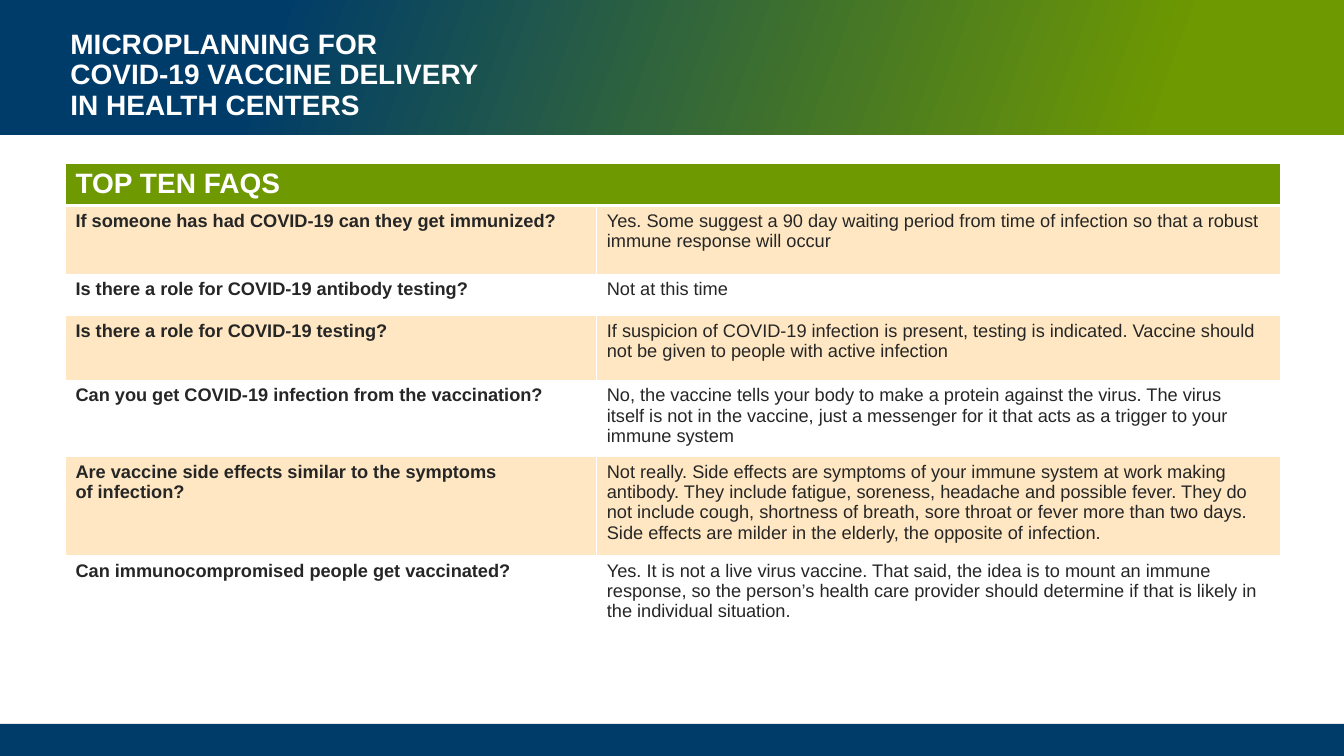
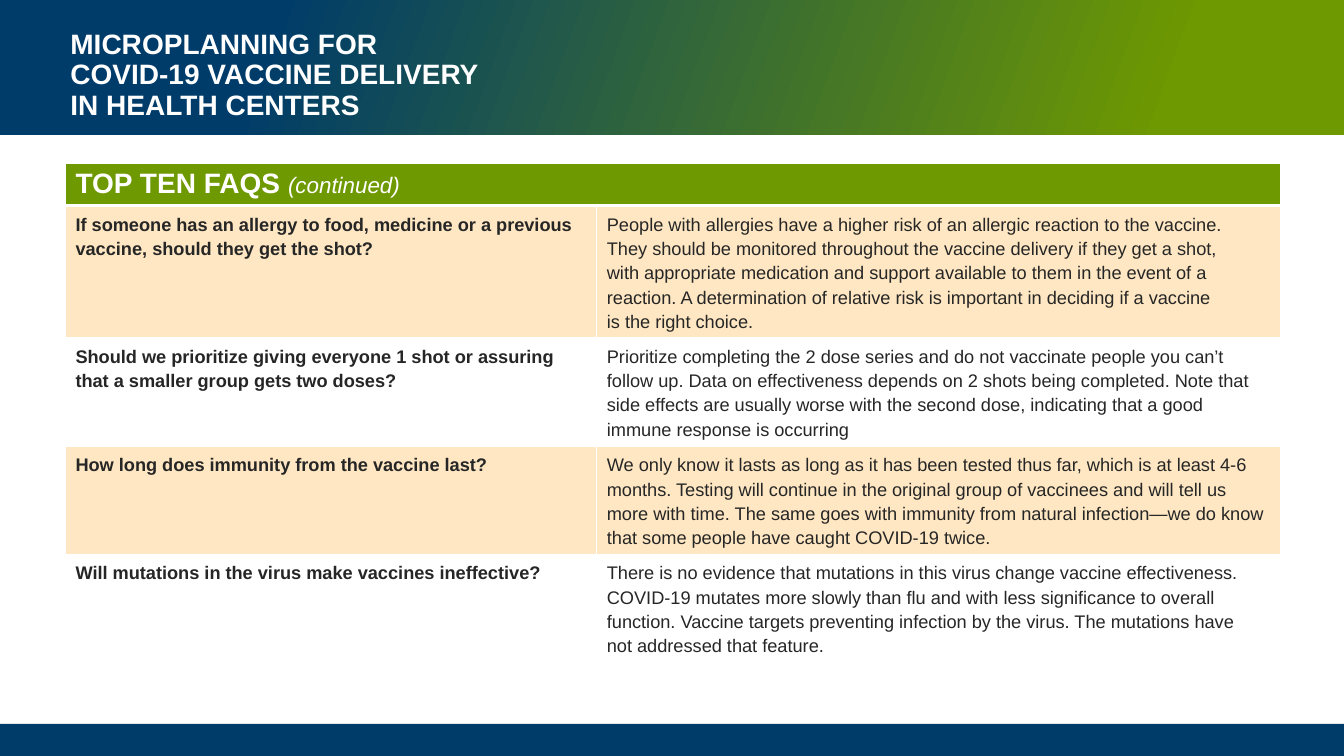
"""Build two slides of vaccine questions and answers."""
from lxml import etree
from pptx import Presentation
from pptx.dml.color import RGBColor
from pptx.enum.shapes import MSO_SHAPE
from pptx.enum.text import MSO_ANCHOR, MSO_AUTO_SIZE, PP_ALIGN
from pptx.oxml.ns import qn
from pptx.util import Cm, Pt

RECT = MSO_SHAPE.RECTANGLE
TOP = MSO_ANCHOR.TOP
FIXED = MSO_AUTO_SIZE.NONE
LEFT = PP_ALIGN.LEFT

HEX = {"navy": "003C6A", "green": "6E9900", "amber": "FCAF30",
       "white": "FFFFFF", "ink": "262626"}
WIDE, HIGH = 33.87, 19.05
TITLE = "MICROPLANNING FOR\nCOVID-19 VACCINE DELIVERY\nIN HEALTH CENTERS"

FIRST = [
    (1.73, "If someone has had COVID-19 can they get immunized?",
     "Yes. Some suggest a 90 day waiting period from time of infection so that "
     "a robust immune response will occur"),
    (1.04, "Is there a role for COVID-19 antibody testing?", "Not at this time"),
    (1.63, "Is there a role for COVID-19 testing?",
     "If suspicion of COVID-19 infection is present, testing is indicated. "
     "Vaccine should not be given to people with active infection"),
    (1.93, "Can you get COVID-19 infection from the vaccination?",
     "No, the vaccine tells your body to make a protein against the virus. The virus\n"
     "itself is not in the vaccine, just a messenger for it that acts as a trigger "
     "to your immune system"),
    (2.49, "Are vaccine side effects similar to the symptoms\nof infection?",
     "Not really. Side effects are symptoms of your immune system at work making "
     "antibody. They include fatigue, soreness, headache and possible fever. They do "
     "not include cough, shortness of breath, sore throat or fever more than two days. "
     "Side effects are milder in the elderly, the opposite of infection."),
    (1.93, "Can immunocompromised people get vaccinated?",
     "Yes. It is not a live virus vaccine. That said, the idea is to mount an immune "
     "response, so the person’s health care provider should determine if that is "
     "likely in the individual situation."),
]
SECOND = [
    (3.28, "If someone has an allergy to food, medicine or a previous vaccine, "
     "should they get the shot?",
     "People with allergies have a higher risk of an allergic reaction to the vaccine.\n"
     "They should be monitored throughout the vaccine delivery if they get a shot,\n"
     "with appropriate medication and support available to them in the event of a "
     "reaction. A determination of relative risk is important in deciding if a vaccine\n"
     "is the right choice."),
    (2.74, "Should we prioritize giving everyone 1 shot or assuring that a smaller "
     "group gets two doses?",
     "Prioritize completing the 2 dose series and do not vaccinate people you can’t "
     "follow up. Data on effectiveness depends on 2 shots being completed. Note that "
     "side effects are usually worse with the second dose, indicating that a good "
     "immune response is occurring"),
    (2.72, "How long does immunity from the vaccine last?",
     "We only know it lasts as long as it has been tested thus far, which is at least "
     "4-6 months. Testing will continue in the original group of vaccinees and will "
     "tell us more with time. The same goes with immunity from natural infection—we do "
     "know that some people have caught COVID-19 twice."),
    (2.72, "Will mutations in the virus make vaccines ineffective?",
     "There is no evidence that mutations in this virus change vaccine effectiveness. "
     "COVID-19 mutates more slowly than flu and with less significance to overall "
     "function. Vaccine targets preventing infection by the virus. The mutations have\n"
     "not addressed that feature."),
]


def rgb(name):
    return RGBColor.from_string(HEX[name])


def write(frame, text, size=13, color="ink", bold=False, italic=False, gap=1.0):
    para = frame.paragraphs[0]
    para.alignment = LEFT
    para.line_spacing = gap
    for index, line in enumerate(text.split("\n")):
        if index:
            para.add_line_break()
        run = para.add_run()
        run.text = line
        font = run.font
        font.name, font.size = "Arial", Pt(size)
        font.bold, font.italic = bold, italic
        font.color.rgb = rgb(color)


class Deck:
    def __init__(self):
        self.show = Presentation()
        self.show.slide_width, self.show.slide_height = Cm(WIDE), Cm(HIGH)
        self.base = self.show.slide_layouts[5]
        self.slide = None
        for item in list(self.base.placeholders):
            if item.placeholder_format.idx:
                item.element.getparent().remove(item.element)
        head = self.base.placeholders[0]
        head.left, head.top = Cm(1.52), Cm(0.64)
        head.width, head.height = Cm(11.48), Cm(2.34)

    def page(self, title):
        self.slide = self.show.slides.add_slide(self.base)
        frame = self.slide.shapes.title.text_frame
        frame.auto_size, frame.vertical_anchor = FIXED, TOP
        write(frame, title, size=20, color="white", bold=True, gap=0.9)

    def band(self, top, high):
        shape = self.slide.shapes.add_shape(RECT, 0, Cm(top), Cm(WIDE), Cm(high))
        shape.shadow.inherit = False
        shape.line.fill.background()
        shape.fill.solid()
        shape.fill.fore_color.rgb = rgb("navy")
        return shape

    def frame(self):
        head, foot = self.band(0, 3.4), self.band(18.24, 0.81)
        head.fill.gradient()
        head.fill.gradient_angle = 340
        stops = zip(head.fill.gradient_stops, ((0.2, "navy"), (0.87, "green")))
        for stop, (place, color) in stops:
            stop.position, stop.color.rgb = place, rgb(color)
        for spot, shape in enumerate((head, foot), 2):
            self.base.shapes.element.insert(spot, shape.element)

    def cell(self, cell, fill, alpha=None, rules=(1, 1, 1, 1)):
        props = cell._tc.get_or_add_tcPr()
        for side, width in zip("LRTB", rules):
            line = etree.SubElement(props, qn("a:ln" + side), w=str(Pt(width)))
            paint = etree.SubElement(line, qn("a:solidFill"))
            etree.SubElement(paint, qn("a:srgbClr"), val=HEX["white"])
        cell.fill.solid()
        cell.fill.fore_color.rgb = rgb(fill)
        if alpha:
            tint = props.find(qn("a:solidFill")).find(qn("a:srgbClr"))
            etree.SubElement(tint, qn("a:alpha"), val=str(alpha * 1000))
        return cell.text_frame

    def table(self, rows, note="", gap=1.0):
        highs = [1.07] + [row[0] for row in rows]
        wides = (13.39, 17.22)
        grid = self.slide.shapes.add_table(
            len(highs), 2, Cm(1.65), Cm(4.11), Cm(sum(wides)), Cm(sum(highs))).table
        grid.horz_banding = False
        for column, wide in zip(grid.columns, wides):
            column.width = Cm(wide)
        for row, high in zip(grid.rows, highs):
            row.height = Cm(high)
        grid.cell(0, 0).merge(grid.cell(0, 1))
        for column in (1, 0):
            head = self.cell(grid.cell(0, column), "green", rules=(1, 1, 1, 3))
        write(head, "TOP TEN FAQS" + (" " if note else ""),
              size=20, color="white", bold=True)
        if note:
            write(head, note, size=16, color="white", italic=True)
        for index, (_, *texts) in enumerate(rows, 1):
            fill, alpha = ("amber", 29) if index % 2 else ("white", None)
            for column, text in enumerate(texts):
                frame = self.cell(grid.cell(index, column), fill, alpha)
                write(frame, text, bold=column == 0, gap=gap)


def main():
    deck = Deck()
    deck.page(TITLE)
    deck.table(FIRST)
    deck.frame()
    deck.page(TITLE)
    deck.table(SECOND, note="(continued)", gap=1.2)
    deck.show.save("out.pptx")


if __name__ == "__main__":
    main()
